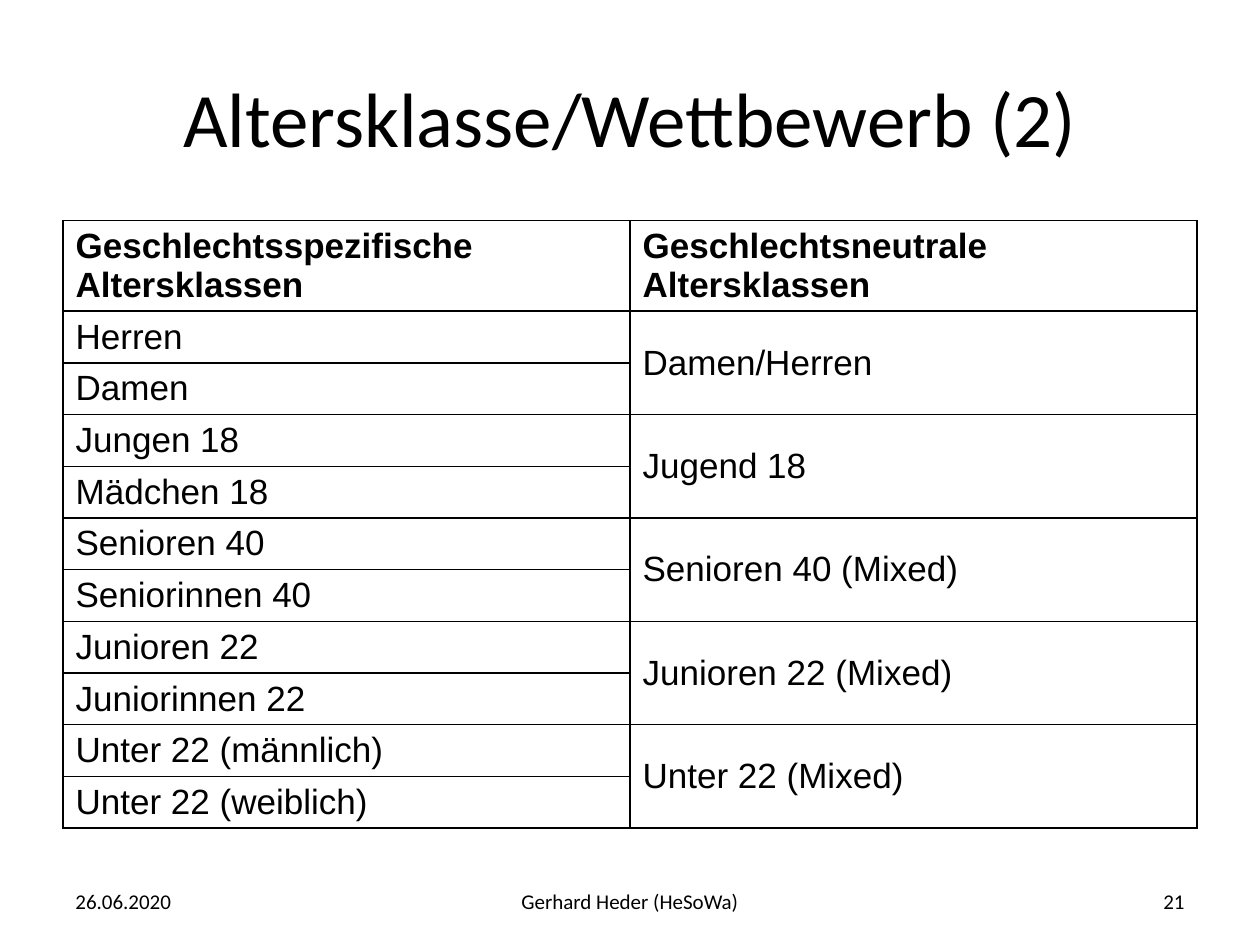
from pptx import Presentation
from pptx.dml.color import RGBColor
from pptx.enum.text import MSO_ANCHOR, PP_ALIGN
from pptx.oxml import parse_xml
from pptx.oxml.ns import nsdecls
from pptx.util import Inches, Pt

BLACK = RGBColor(0, 0, 0)
WHITE = RGBColor(255, 255, 255)
HEADERS = ("Geschlechtsspezifische Altersklassen", "Geschlechtsneutrale Altersklassen")
AGE_CLASSES = [
    ("Herren", "Damen", "Damen/Herren"),
    ("Jungen 18", "Mädchen 18", "Jugend 18"),
    ("Senioren 40", "Seniorinnen 40", "Senioren 40 (Mixed)"),
    ("Junioren 22", "Juniorinnen 22", "Junioren 22 (Mixed)"),
    ("Unter 22 (männlich)", "Unter 22 (weiblich)", "Unter 22 (Mixed)"),
]


class SlideBuilder:
    """Draws styled elements on a grid of 60 columns and 150 rows."""

    heading_font = "Calibri"
    table_font = "Arial"
    table_size = 20
    header_height = Inches(0.72)
    row_height = Inches(0.41)

    def __init__(self, presentation):
        self.column = presentation.slide_width / 60
        self.row = presentation.slide_height / 150
        self.slide = presentation.slides.add_slide(presentation.slide_layouts[6])
        self.slide.background.fill.solid()
        self.slide.background.fill.fore_color.rgb = WHITE

    def place(self, left, top, width, height):
        return (round(left * self.column), round(top * self.row),
                round(width * self.column), round(height * self.row))

    def add_run(self, paragraph, text, font, size, bold=False):
        run = paragraph.add_run()
        run.text = text
        run.font.name = font
        run.font.size = Pt(size)
        run.font.bold = bold
        run.font.color.rgb = BLACK

    def add_text(self, text, area, size, alignment):
        frame = self.slide.shapes.add_textbox(*self.place(*area)).text_frame
        frame.word_wrap = True
        frame.vertical_anchor = MSO_ANCHOR.MIDDLE
        paragraph = frame.paragraphs[0]
        paragraph.alignment = alignment
        self.add_run(paragraph, text, self.heading_font, size)

    def add_borders(self, cell):
        properties = cell._tc.get_or_add_tcPr()
        for position, side in enumerate(("lnL", "lnR", "lnT", "lnB")):
            properties.insert(position, parse_xml(
                f'<a:{side} {nsdecls("a")} w="{Pt(1)}"><a:solidFill>'
                f'<a:srgbClr val="{BLACK}"/></a:solidFill></a:{side}>'))

    def fill_cell(self, cell, text, bold=False):
        self.add_run(cell.text_frame.paragraphs[0], text,
                     self.table_font, self.table_size, bold)

    def add_class_table(self, headers, groups, area):
        row_count = 1 + 2 * len(groups)
        table = self.slide.shapes.add_table(
            row_count, len(headers), *self.place(*area)).table
        table.first_row = table.horz_banding = False
        for row in table.rows:
            row.height = self.row_height
        table.rows[0].height = self.header_height
        for cell in table.iter_cells():
            cell.fill.background()
            self.add_borders(cell)
        for index, header in enumerate(headers):
            self.fill_cell(table.cell(0, index), header, bold=True)
        for index, (first, second, neutral) in enumerate(groups):
            top = 1 + 2 * index
            self.fill_cell(table.cell(top, 0), first)
            self.fill_cell(table.cell(top + 1, 0), second)
            merged = table.cell(top, 1)
            merged.merge(table.cell(top + 1, 1))
            merged.vertical_anchor = MSO_ANCHOR.MIDDLE
            self.fill_cell(merged, neutral)


def main():
    presentation = Presentation()
    presentation.slide_width = Inches(10)
    presentation.slide_height = Inches(7.5)
    builder = SlideBuilder(presentation)
    builder.add_class_table(HEADERS, AGE_CLASSES, (3, 35, 54, 96))
    builder.add_text("Altersklasse/Wettbewerb (2)", (3, 6, 54, 25), 44, PP_ALIGN.CENTER)
    builder.add_text("26.06.2020", (3, 139, 14, 8), 12, PP_ALIGN.LEFT)
    builder.add_text("Gerhard Heder (HeSoWa)", (20.5, 139, 19, 8), 12, PP_ALIGN.CENTER)
    builder.add_text("21", (43, 139, 14, 8), 12, PP_ALIGN.RIGHT)
    presentation.save("out.pptx")


if __name__ == "__main__":
    main()
